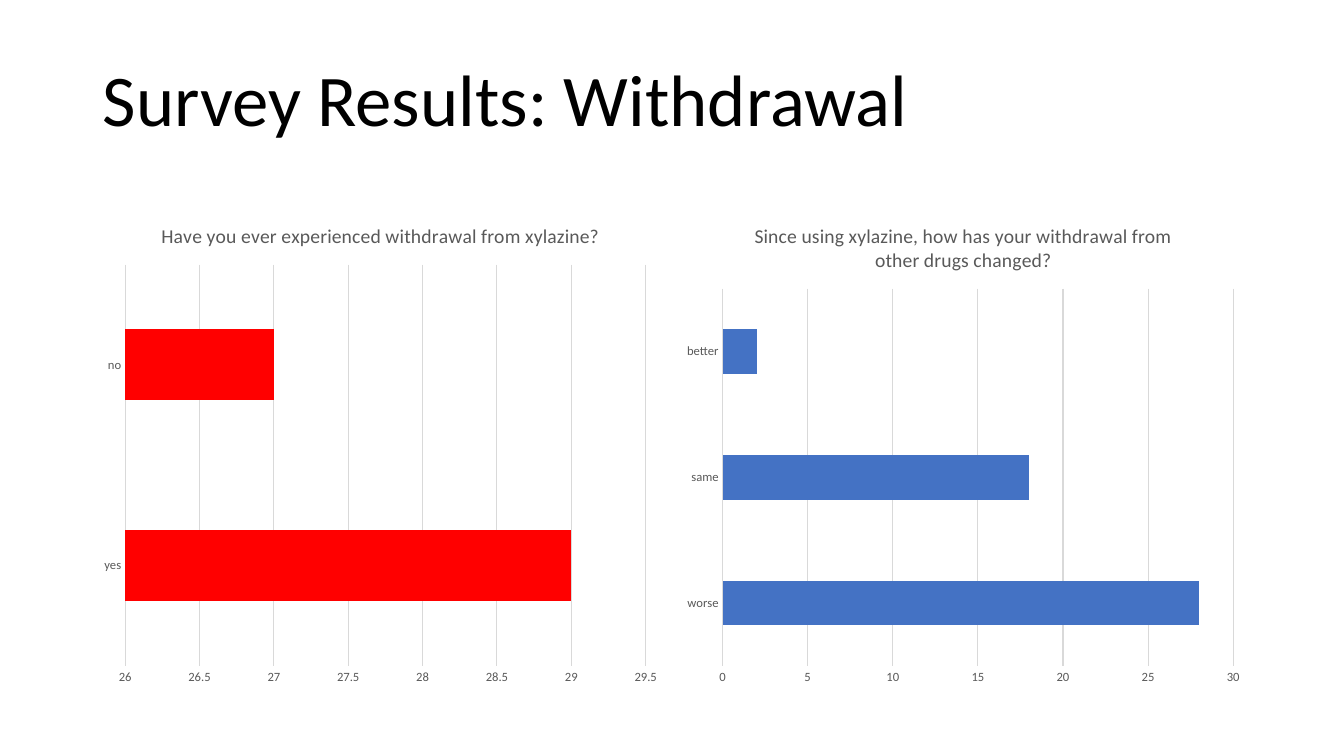
"""Build the survey slide on withdrawal with two bar charts."""
from dataclasses import dataclass

from pptx import Presentation
from pptx.chart.data import CategoryChartData
from pptx.dml.color import RGBColor
from pptx.enum.chart import XL_CHART_TYPE as ChartType, XL_TICK_MARK as Tick
from pptx.enum.text import MSO_ANCHOR as Anchor
from pptx.slide import Slide
from pptx.text.text import Font
from pptx.util import Inches, Pt

BLACK = RGBColor(0x00, 0x00, 0x00)
GREY = RGBColor(0x59, 0x59, 0x59)
RULE = RGBColor(0xD9, 0xD9, 0xD9)
RED = RGBColor(0xFF, 0x00, 0x00)
BLUE = RGBColor(0x44, 0x72, 0xC4)

MARGIN, COL_PITCH, COL_WIDTH = 0.92, 5.78, 5.71
TITLE_TOP, TITLE_WIDTH, TITLE_HEIGHT = 0.2, 11.5, 1.65
CHART_TOP, CHART_HEIGHT = 2.02, 4.87


@dataclass(frozen=True)
class Question:
    column: int
    title: str
    series: str
    answers: dict[str, int]
    color: RGBColor
    scale: dict[str, float]


CHANGE = "Since using xylazine, how has your withdrawal from other drugs changed?"
QUESTIONS = (
    Question(0, "Have you ever experienced withdrawal from xylazine?", "Series 1",
             {"yes": 29, "no": 27}, RED,
             {"minimum_scale": 26, "maximum_scale": 29.5, "major_unit": 0.5}),
    Question(1, CHANGE, CHANGE, {"worse": 28, "same": 18, "better": 2}, BLUE,
             {"minimum_scale": 0, "maximum_scale": 30, "major_unit": 5}),
)


def set_font(font: Font, size: float, color: RGBColor) -> None:
    for name, value in {"name": "Calibri", "size": Pt(size), "bold": False}.items():
        setattr(font, name, value)
    font.color.rgb = color


def add_title(s: Slide, text: str) -> None:
    sp = s.shapes.add_textbox(Inches(MARGIN), Inches(TITLE_TOP),
                              Inches(TITLE_WIDTH), Inches(TITLE_HEIGHT))
    tf = sp.text_frame
    for name, value in {"word_wrap": True, "vertical_anchor": Anchor.MIDDLE}.items():
        setattr(tf, name, value)
    p = tf.paragraphs[0]
    p.line_spacing = 0.9
    r = p.add_run()
    r.text = text
    set_font(r.font, 52, BLACK)


def add_question(s: Slide, q: Question) -> None:
    data = CategoryChartData()
    data.categories = list(q.answers)
    data.add_series(q.series, list(q.answers.values()))
    chart = s.shapes.add_chart(
        ChartType.BAR_CLUSTERED, Inches(MARGIN + q.column * COL_PITCH),
        Inches(CHART_TOP), Inches(COL_WIDTH), Inches(CHART_HEIGHT), data).chart
    chart.has_legend = False
    set_font(chart.font, 10, BLACK)

    p = chart.chart_title.text_frame.paragraphs[0]
    r = p.add_run()
    r.text = q.title
    set_font(r.font, 14, GREY)
    chart.chart_title.include_in_layout = False

    plot = chart.plots[0]
    for name, value in {"gap_width": 182, "vary_by_categories": False}.items():
        setattr(plot, name, value)
    fill = plot.series[0].format.fill
    fill.solid()
    fill.fore_color.rgb = q.color

    cat, val = chart.category_axis, chart.value_axis
    for axis in (cat, val):
        axis.major_tick_mark = axis.minor_tick_mark = Tick.NONE
        set_font(axis.tick_labels.font, 9, GREY)
    for name, value in q.scale.items():
        setattr(val, name, value)
    val.format.line.fill.background()
    for line in (cat.format.line, val.major_gridlines.format.line):
        line.width = Pt(0.75)
        line.color.rgb = RULE


def main() -> None:
    prs = Presentation()
    prs.slide_width, prs.slide_height = Inches(13.33), Inches(7.5)
    s = prs.slides.add_slide(prs.slide_layouts[6])
    for question in QUESTIONS:
        add_question(s, question)
    add_title(s, "Survey Results: Withdrawal")
    prs.save("out.pptx")


if __name__ == "__main__":
    main()
